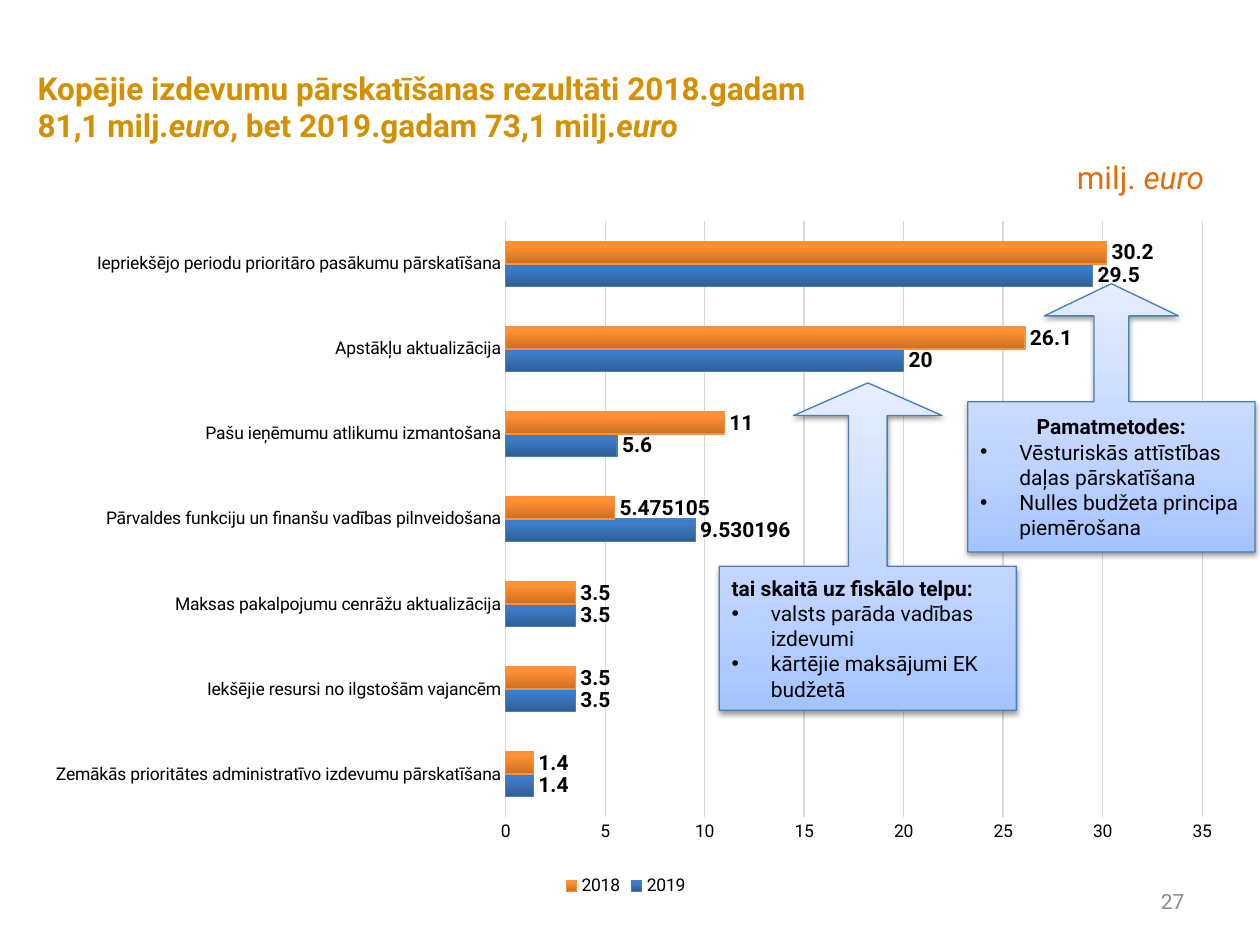
from copy import deepcopy

from lxml import etree
from pptx import Presentation
from pptx.chart.data import CategoryChartData as Data
from pptx.dml.color import RGBColor as RGB
from pptx.enum.chart import XL_CHART_TYPE as Kind
from pptx.enum.chart import XL_LABEL_POSITION as Spot
from pptx.enum.chart import XL_LEGEND_POSITION as Side
from pptx.enum.chart import XL_TICK_MARK as Tick
from pptx.enum.shapes import MSO_SHAPE as Form
from pptx.enum.text import MSO_ANCHOR as Anchor
from pptx.enum.text import PP_ALIGN as Align
from pptx.oxml.ns import qn
from pptx.util import Cm, Pt

FONT = "Roboto"
BLACK = RGB(0, 0, 0)
GOLD = RGB(0xD3, 0x90, 0x01)
ORANGE = RGB(0xE4, 0x6C, 0x0A)
GREY = RGB(0x8C, 0x8C, 0x8C)
GRID = RGB(0xD9, 0xD9, 0xD9)
BLUE = RGB(0x4B, 0x7E, 0xBC)
AMBER = RGB(0xF6, 0x92, 0x40)
SKY = [(0, RGB(0xA4, 0xC4, 0xFF)), (0.35, RGB(0xBF, 0xD4, 0xFF)),
       (1, RGB(0xE6, 0xEE, 0xFF))]
NAVY = [(0, RGB(0x2F, 0x5F, 0x99)), (0.8, RGB(0x3D, 0x7C, 0xC7)),
        (1, RGB(0x3A, 0x7C, 0xCB))]
FIRE = [(0, RGB(0xCC, 0x6E, 0x20)), (0.8, RGB(0xFF, 0x90, 0x34)),
        (1, RGB(0xFF, 0x91, 0x36))]

# Category, 2018 and 2019 values, from the bottom up
ROWS = [
    ("Zemākās prioritātes administratīvo izdevumu pārskatīšana", 1.4, 1.4),
    ("Iekšējie resursi no ilgstošām vajancēm", 3.5, 3.5),
    ("Maksas pakalpojumu cenrāžu aktualizācija", 3.5, 3.5),
    ("Pārvaldes funkciju un finanšu vadības pilnveidošana",
     5.475105, 9.530196),
    ("Pašu ieņēmumu atlikumu izmantošana", 11, 5.6),
    ("Apstākļu aktualizācija", 26.1, 20),
    ("Iepriekšējo periodu prioritāro pasākumu pārskatīšana", 30.2, 29.5),
]


def style(font, size, color=BLACK, bold=False):
    font.name, font.size, font.bold = FONT, Pt(size), bold
    font.color.rgb = color


def write(para, *parts, size=12, color=BLACK, bold=False, align=Align.LEFT,
          bullet=False):
    """Fill a paragraph; every second part is italic."""
    para.alignment = align
    if bullet:
        props = para._p.get_or_add_pPr()
        props.set("marL", str(Cm(0.79)))
        props.set("indent", str(-Cm(0.79)))
        face = etree.SubElement(props, qn("a:buFont"))
        face.set("typeface", "Arial")
        etree.SubElement(props, qn("a:buChar")).set("char", "•")
    for i, part in enumerate(parts):
        run = para.add_run()
        run.text = part
        style(run.font, size, color, bold)
        run.font.italic = i % 2 == 1


def shade(fill, root, stops):
    """Give a fill three stops that run from the bottom up."""
    fill.gradient()
    fill.gradient_angle = 90
    marks = next(root.iter(qn("a:gsLst")))
    marks.append(deepcopy(marks[0]))
    for stop, (pos, color) in zip(fill.gradient_stops, stops):
        stop.position = pos
        stop.color.rgb = color


def edge(line, color):
    line.color.rgb = color
    line.width = Pt(0.75)


def label(slide, box, *parts, anchor=Anchor.MIDDLE, **form):
    frame = slide.shapes.add_textbox(*map(Cm, box)).text_frame
    frame.word_wrap = True
    frame.vertical_anchor = anchor
    write(frame.paragraphs[0], *parts, **form)


def callout(slide, box, adjust, head, items, align=Align.LEFT):
    shape = slide.shapes.add_shape(Form.UP_ARROW_CALLOUT, *map(Cm, box))
    for i, value in enumerate(adjust):
        shape.adjustments[i] = value
    props = shape._element.spPr
    shade(shape.fill, props, SKY)
    edge(shape.line, BLUE)

    # Soft shadow below
    shape.shadow.inherit = False
    glow = etree.SubElement(props.find(qn("a:effectLst")),
                            qn("a:outerShdw"), blurRad=str(Pt(3.1)),
                            dist=str(Pt(1.6)), dir="5400000", rotWithShape="0")
    ink = etree.SubElement(glow, qn("a:srgbClr"), val="000000")
    etree.SubElement(ink, qn("a:alpha"), val="38000")

    # Heading and bullets
    frame = shape.text_frame
    frame.word_wrap = True
    frame.vertical_anchor = Anchor.MIDDLE
    write(frame.paragraphs[0], head, bold=True, align=align)
    for item in items:
        write(frame.add_paragraph(), item, bullet=True)


def bars(slide, box):
    names, first, second = zip(*ROWS)
    data = Data()
    data.categories = names
    data.add_series("2019", second)
    data.add_series("2018", first)
    chart = slide.shapes.add_chart(Kind.BAR_CLUSTERED, *map(Cm, box),
                                   data).chart
    style(chart.font, 10)
    chart.has_title = False
    chart.has_legend = True
    chart.legend.position = Side.BOTTOM
    chart.legend.include_in_layout = False
    style(chart.legend.font, 10)

    # Axes
    cat, val = chart.category_axis, chart.value_axis
    for axis in (cat, val):
        axis.major_tick_mark = axis.minor_tick_mark = Tick.NONE
        style(axis.tick_labels.font, 10)
    edge(cat.format.line, GRID)
    val.format.line.fill.background()
    edge(val.major_gridlines.format.line, GRID)
    val.minimum_scale, val.maximum_scale, val.major_unit = 0, 35, 5

    # Series and value labels
    plot = chart.plots[0]
    plot.gap_width, plot.overlap, plot.vary_by_categories = 182, 0, False
    for ser, stops, line in zip(plot.series, (NAVY, FIRE), (BLUE, AMBER)):
        ser.invert_if_negative = False
        shade(ser.format.fill, ser._element, stops)
        edge(ser.format.line, line)
        tags = ser.data_labels
        tags.show_value = True
        tags.position = Spot.OUTSIDE_END
        style(tags.font, 12, bold=True)

    # Inner plot area
    area = next(chart._chartSpace.iter(qn("c:plotArea")))
    for old in area.findall(qn("c:layout")):
        area.remove(old)
    layout = etree.Element(qn("c:layout"))
    area.insert(0, layout)
    manual = etree.SubElement(layout, qn("c:manualLayout"))
    for key, value in (("layoutTarget", "inner"), ("xMode", "edge"),
                       ("yMode", "edge"), ("x", 0.4), ("y", 0.03),
                       ("w", 0.58), ("h", 0.85)):
        etree.SubElement(manual, qn("c:" + key)).set("val", str(value))


def main():
    deck = Presentation()
    deck.slide_width, deck.slide_height = Cm(25.4), Cm(19.05)
    slide = deck.slides.add_slide(deck.slide_layouts[6])

    label(slide, (18.21, 17.65, 5.92, 1.02), "27", color=GREY,
          align=Align.RIGHT)
    bars(slide, (0.51, 4.04, 24.21, 14.12))
    label(slide, (0.51, 1.55, 16.79, 1.19),
          "Kopējie izdevumu pārskatīšanas rezultāti 2018.gadam 81,1 milj.",
          "euro", ", bet 2019.gadam 73,1 milj.", "euro",
          size=18, color=GOLD, bold=True)
    callout(slide, (19.51, 5.72, 5.79, 5.41), (0.13, 0.25, 0.12, 0.56),
            "Pamatmetodes:",
            ["Vēsturiskās attīstības daļas pārskatīšana",
             "Nulles budžeta principa piemērošana"], Align.CENTER)
    callout(slide, (14.5, 7.72, 5.99, 6.6), (0.13, 0.25, 0.11, 0.44),
            "tai skaitā uz fiskālo telpu:",
            ["valsts parāda vadības izdevumi",
             "kārtējie maksājumi EK budžetā"])
    label(slide, (21.46, 3.07, 3.23, 1.02), "milj. ", "euro",
          anchor=Anchor.TOP, size=18, color=ORANGE)
    deck.save("out.pptx")


if __name__ == "__main__":
    main()
